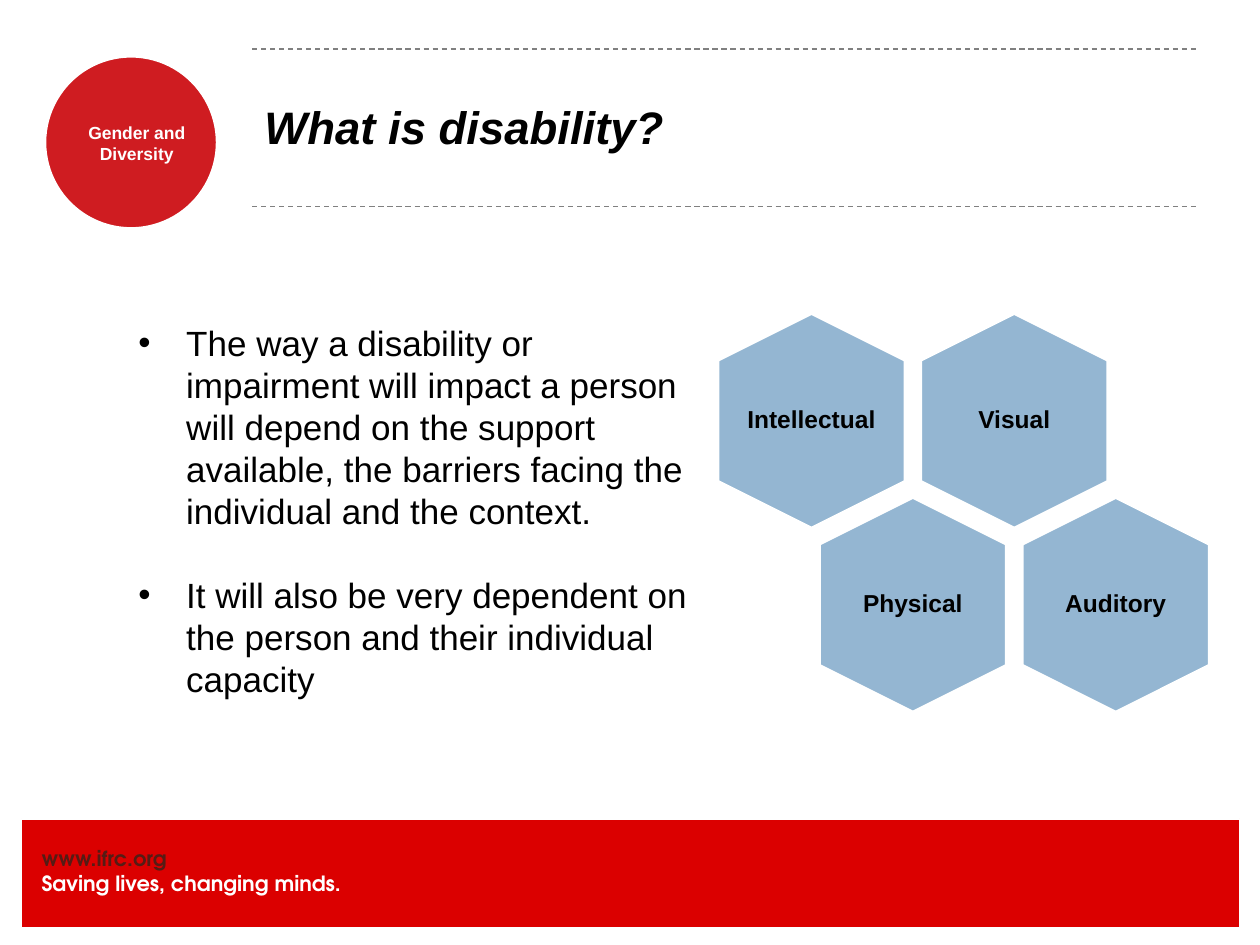
from dataclasses import dataclass

from lxml.etree import SubElement
from pptx import Presentation
from pptx.dml.color import RGBColor
from pptx.enum.dml import MSO_LINE
from pptx.enum.shapes import MSO_CONNECTOR, MSO_SHAPE
from pptx.enum.text import MSO_ANCHOR, PP_ALIGN
from pptx.oxml.ns import qn
from pptx.util import Inches, Pt

# The slide is a grid of 100 columns by 75 rows
COLS, ROWS = 100, 75
CELL = Inches(0.1)


@dataclass(frozen=True)
class Theme:
    white: str = "FFFFFF"
    black: str = "000000"
    gray: str = "808080"
    band: str = "DB0000"
    badge: str = "CF1C21"
    link: str = "551C15"
    hexa: str = "94B6D2"
    sans: str = "Arial"
    round: str = "TeX Gyre Adventor"
    title: int = 26
    body: int = 20
    lead: int = 24
    label: int = 14
    foot: int = 12
    small: int = 10


LOOK = Theme()


def grid(*cells):
    return [round(cell * CELL) for cell in cells]


def tint(code):
    return RGBColor.from_string(code)


def shape(slide, kind, place, fill, width):
    item = slide.shapes.add_shape(kind, *grid(*place))
    item.shadow.inherit = False
    item.fill.solid()
    item.fill.fore_color.rgb = tint(fill)
    item.line.color.rgb = tint(LOOK.white)
    item.line.width = Pt(width)
    return item


def rule(slide, left, right, row):
    line = slide.shapes.add_connector(
        MSO_CONNECTOR.STRAIGHT, *grid(left, row, right, row))
    line.line.color.rgb = tint(LOOK.gray)
    line.line.width = Pt(0.75)
    line.line.dash_style = MSO_LINE.DASH
    SubElement(line._element.spPr, qn("a:effectLst"))


def bullet(para, indent):
    props = para._p.get_or_add_pPr()
    props.set("marL", str(indent))
    props.set("indent", str(-indent))
    SubElement(props, qn("a:buFont"), typeface=LOOK.sans)
    SubElement(props, qn("a:buChar"), char="•")


def text(slide, place, lines, size, font=LOOK.sans, tints=(LOOK.black,),
         bold=False, slant=False, align=PP_ALIGN.LEFT, anchor=MSO_ANCHOR.TOP,
         inset=(0, 0), lead=None, gap=0, indent=None):
    frame = slide.shapes.add_textbox(*grid(*place)).text_frame
    frame.word_wrap = True
    frame.vertical_anchor = anchor
    frame.margin_left = frame.margin_right = Inches(inset[0])
    frame.margin_top = frame.margin_bottom = Inches(inset[1])
    for num, line in enumerate(lines):
        para = frame.add_paragraph() if num else frame.paragraphs[0]
        para.alignment = align
        if lead:
            para.line_spacing = lead
        if num and gap:
            para.space_before = Pt(gap)
        if indent:
            bullet(para, indent)
        run = para.add_run()
        run.text = line
        run.font.name = font
        run.font.size = Pt(size)
        run.font.bold = bold
        run.font.italic = slant
        run.font.color.rgb = tint(tints[num % len(tints)])


def footer(slide):
    shape(slide, MSO_SHAPE.RECTANGLE, (1.7, 65, 96.7, 8.6), LOOK.band, 0.75)
    text(slide, (3.3, 67.1, 34.2, 4),
         ["www.ifrc.org", "Saving lives, changing minds."], LOOK.foot,
         font=LOOK.round, tints=(LOOK.link, LOOK.white), bold=True)


def header(slide):
    # Round badge
    shape(slide, MSO_SHAPE.OVAL, (3.5, 4.4, 13.8, 13.8), LOOK.badge, 2.5)
    text(slide, (4.6, 9.7, 12.5, 3.4), ["Gender and Diversity"], LOOK.small,
         tints=(LOOK.white,), bold=True, align=PP_ALIGN.CENTER)
    # Title between two dashed rules
    for row in (3.9, 16.4):
        rule(slide, 20, 95, row)
    text(slide, (20, 3.8, 75, 12.5), ["What is disability?"], LOOK.title,
         bold=True, slant=True, anchor=MSO_ANCHOR.MIDDLE, inset=(0.1, 0.05))


def comb(slide):
    # Each row of cells is shifted by half a step
    names = (("Intellectual", "Visual"), ("Physical", "Auditory"))
    step, drop = 16.1, 14.6
    wide, high = 17.1, 14.9
    for row, pair in enumerate(names):
        for col, name in enumerate(pair):
            x = 64.4 + (col + row / 2) * step
            y = 33.4 + row * drop
            cell = shape(slide, MSO_SHAPE.HEXAGON,
                         (x - wide / 2, y - high / 2, wide, high),
                         LOOK.hexa, 2)
            cell.adjustments[0] = 0.25
            cell.rotation = 90
            text(slide, (x - 5.2, y - 5.9, 10.4, 11.8), [name], LOOK.label,
                 bold=True, align=PP_ALIGN.CENTER, anchor=MSO_ANCHOR.MIDDLE,
                 lead=0.9)


def body(slide):
    text(slide, (10, 25, 46.7, 31.3), [
        "The way a disability or impairment will impact a person will depend "
        "on the support available, the barriers facing the individual and "
        "the context.",
        "It will also be very dependent on the person and their individual "
        "capacity",
    ], LOOK.body, inset=(0.1, 0.05), lead=Pt(LOOK.lead), gap=LOOK.lead,
        indent=Inches(0.38))


def main():
    deck = Presentation()
    deck.slide_width, deck.slide_height = grid(COLS, ROWS)
    slide = deck.slides.add_slide(deck.slide_layouts[6])
    footer(slide)
    header(slide)
    comb(slide)
    body(slide)
    deck.save("out.pptx")


if __name__ == "__main__":
    main()
